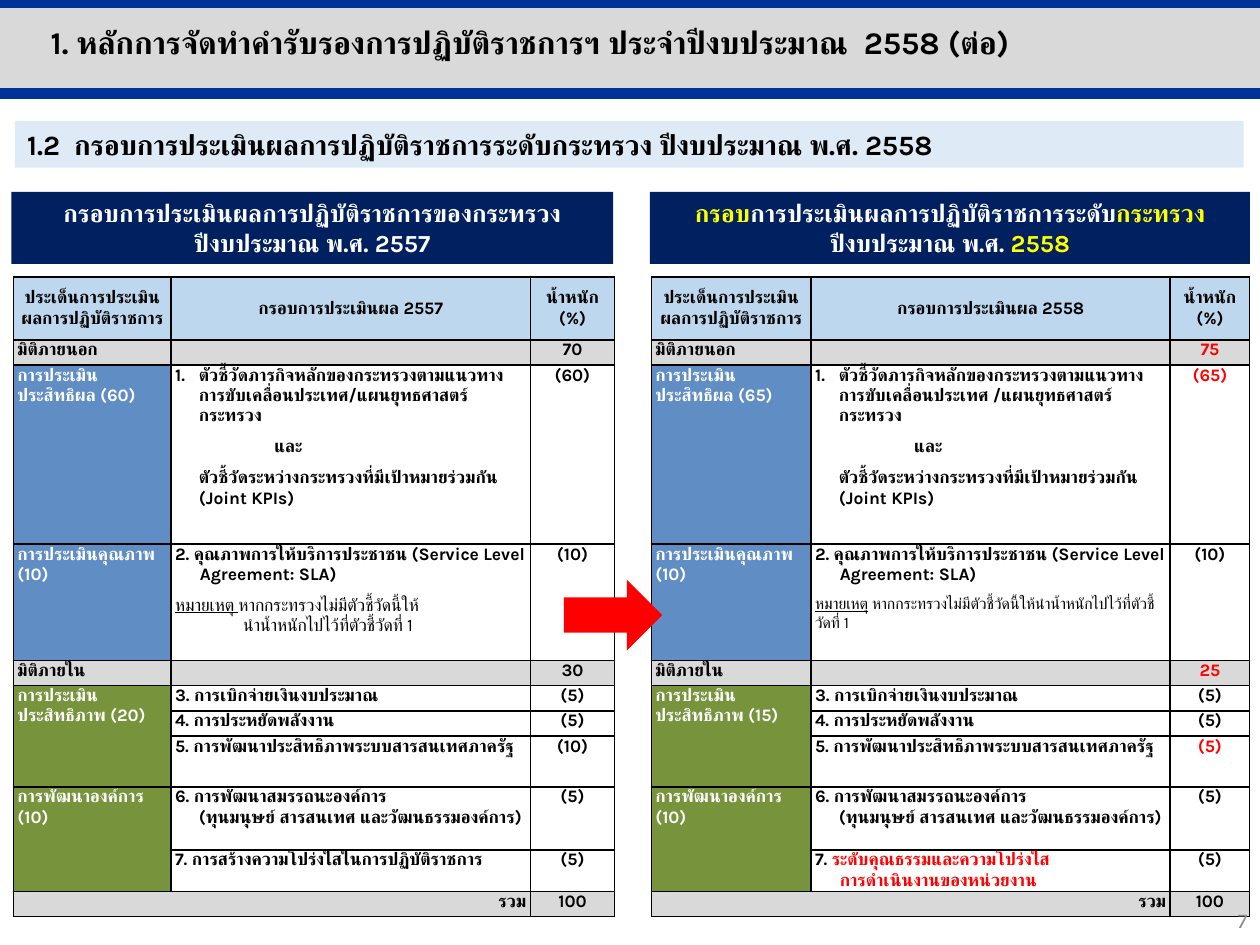
from dataclasses import dataclass

from lxml.etree import SubElement
from pptx import Presentation
from pptx.dml.color import RGBColor
from pptx.enum.shapes import MSO_CONNECTOR as Connector, MSO_SHAPE as Shape
from pptx.enum.text import MSO_ANCHOR as Anchor, PP_ALIGN as Align
from pptx.oxml.ns import qn
from pptx.util import Cm, Pt

FONT = "Karla"
BLACK, WHITE, RED, YELLOW = "000000", "FFFFFF", "FF0000", "FFFF00"
GREY, NAVY, BLUE, GREEN = "D9D9D9", "002060", "608DC4", "77933C"
HEADER_BLUE, PALE_BLUE, RULE_BLUE = "BDD7EE", "DEEBF7", "003399"

ROW_HEIGHTS = [1.27, 0.51, 3.61, 2.34, 0.51, 0.51, 0.51, 1.02, 1.27, 0.84, 0.51]
TOTAL_ROWS = (1, 4, 10)
WEIGHTS_2557 = [70, 60, 10, 30, 5, 5, 10, 5, 5, 100]
WEIGHTS_2558 = [75, 65, 10, 25, 5, 5, 5, 5, 5, 100]


@dataclass
class Run:
    text: str
    color: str = BLACK
    size: float = 10
    bold: bool = True
    underline: bool = False


@dataclass
class Paragraph:
    runs: list
    margin: float = 0
    hanging: float = 0
    before: float = 0
    align: Align = Align.LEFT
    numbered: bool = False


def line(text, color=BLACK, **layout):
    return Paragraph([Run(text, color)], **layout)


def rgb(color):
    return RGBColor.from_string(color)


def add_run(paragraph, content):
    """Add one styled run for each line of the content."""
    for index, text in enumerate(content.text.split("\n")):
        if index:
            paragraph.add_line_break()
        run = paragraph.add_run()
        run.text = text
        font = run.font
        font.name, font.size = FONT, Pt(content.size)
        font.bold, font.underline = content.bold, content.underline
        font.color.rgb = rgb(content.color)
        SubElement(font._element, qn("a:cs"), typeface=FONT)


def write_text(frame, paragraphs):
    frame.word_wrap = True
    for index, content in enumerate(paragraphs):
        paragraph = frame.add_paragraph() if index else frame.paragraphs[0]
        properties = paragraph._p.get_or_add_pPr()
        properties.set("marL", str(Cm(content.margin)))
        properties.set("indent", str(-Cm(content.hanging)))
        if content.numbered:
            SubElement(properties, qn("a:buAutoNum"), type="arabicPeriod")
        paragraph.alignment = content.align
        paragraph.space_before = Pt(content.before)
        for run in content.runs:
            add_run(paragraph, run)


def add_block(slide, kind, box, color, paragraphs=()):
    shape = slide.shapes.add_shape(kind, *map(Cm, box))
    shape.shadow.inherit = False
    shape.fill.solid()
    shape.fill.fore_color.rgb = rgb(color)
    shape.line.fill.background()
    write_text(shape.text_frame, paragraphs)


def add_text(slide, box, paragraph):
    frame = slide.shapes.add_textbox(*map(Cm, box)).text_frame
    frame.vertical_anchor = Anchor.MIDDLE
    write_text(frame, [paragraph])


def add_rule(slide, y):
    connector = slide.shapes.add_connector(
        Connector.STRAIGHT, 0, Cm(y), Cm(25.4), Cm(y))
    connector.line.color.rgb = rgb(RULE_BLUE)
    connector.line.width = Pt(6)
    SubElement(connector._element.spPr, qn("a:effectLst"))


def add_borders(cell):
    properties = cell._tc.get_or_add_tcPr()
    for side in ("lnL", "lnR", "lnT", "lnB"):
        border = SubElement(properties, qn(f"a:{side}"), w=str(Pt(1)))
        SubElement(SubElement(border, qn("a:solidFill")), qn("a:srgbClr"), val=BLACK)


def fill_cell(cell, color, paragraphs):
    add_borders(cell)
    cell.fill.solid()
    cell.fill.fore_color.rgb = rgb(color)
    cell.margin_left = cell.margin_right = Cm(0.08)
    cell.margin_top = cell.margin_bottom = 0
    if paragraphs:
        write_text(cell.text_frame, paragraphs)
    else:
        SubElement(cell.text_frame.paragraphs[0]._p, qn("a:endParaRPr"), sz="1000")


def dimension_labels(weights):
    """Give the text and fill of the first column below the header."""
    efficiency, development = sum(weights[4:7]), sum(weights[7:9])
    return {
        1: ("มิติภายนอก", GREY),
        2: (f"การประเมินประสิทธิผล ({weights[1]})", BLUE),
        3: (f"การประเมินคุณภาพ ({weights[2]})", BLUE),
        4: ("มิติภายใน", GREY),
        5: (f"การประเมินประสิทธิภาพ ({efficiency})", GREEN),
        8: (f"การพัฒนาองค์การ ({development})", GREEN),
    }


def indicators(slash, note, transparency):
    """Give the paragraphs of the middle column by row."""
    return {
        2: [line("ตัวชี้วัดภารกิจหลักของกระทรวงตามแนวทางการขับเคลื่อนประเทศ"
                 f"{slash}แผนยุทธศาสตร์กระทรวง", margin=0.48, hanging=0.48, numbered=True),
            line("และ", margin=2, before=6),
            line("ตัวชี้วัดระหว่างกระทรวงที่มีเป้าหมายร่วมกัน (Joint KPIs)",
                 margin=0.48, before=6)],
        3: [line("2. คุณภาพการให้บริการประชาชน (Service Level Agreement: SLA)",
                 margin=0.5, hanging=0.5), *note],
        5: [line("3. การเบิกจ่ายเงินงบประมาณ")],
        6: [line("4. การประหยัดพลังงาน")],
        7: [line("5. การพัฒนาประสิทธิภาพระบบสารสนเทศภาครัฐ", margin=0.5, hanging=0.5)],
        8: [line("6. การพัฒนาสมรรถนะองค์การ \n(ทุนมนุษย์ สารสนเทศ และวัฒนธรรมองค์การ)",
                 margin=0.48, hanging=0.48)],
        9: [Paragraph([Run("7. "), transparency], margin=0.5, hanging=0.5)],
    }


def add_framework_table(slide, left, widths, year, weights, middle):
    frame = slide.shapes.add_table(len(ROW_HEIGHTS), 3, Cm(left), Cm(5.58),
                                   Cm(sum(widths)), Cm(sum(ROW_HEIGHTS)))
    table = frame.table
    for column, width in zip(table.columns, widths):
        column.width = Cm(width)
    for row, height in zip(table.rows, ROW_HEIGHTS):
        row.height = Cm(height)

    headers = [["ประเด็นการประเมินผลการปฏิบัติราชการ"],
               [f"กรอบการประเมินผล {year}"], ["น้ำหนัก", "(%)"]]
    for column, texts in enumerate(headers):
        cell = table.cell(0, column)
        fill_cell(cell, HEADER_BLUE, [line(text, align=Align.CENTER) for text in texts])
        cell.vertical_anchor = Anchor.MIDDLE

    labels = dimension_labels(weights)
    for row, (weight, previous) in enumerate(zip(weights, WEIGHTS_2557), start=1):
        is_total = row in TOTAL_ROWS
        label, color = labels.get(row, ("", GREY if is_total else GREEN))
        label_color = BLACK if is_total else WHITE
        paragraphs = [line(label, label_color)] if label else []
        if row == 10:
            paragraphs = [line("รวม", align=Align.RIGHT)]
        fill_cell(table.cell(row, 0), color, paragraphs)
        row_color = GREY if is_total else WHITE
        fill_cell(table.cell(row, 1), row_color, middle.get(row))
        weight_text = str(weight) if is_total else f"({weight})"
        weight_color = BLACK if weight == previous else RED
        fill_cell(table.cell(row, 2), row_color,
                  [line(weight_text, weight_color, align=Align.CENTER)])
    table.cell(2, 1).margin_right = Cm(0.2)

    for first, last in (((5, 0), (7, 0)), ((8, 0), (9, 0)), ((10, 0), (10, 1))):
        table.cell(*first).merge(table.cell(*last))


def main():
    presentation = Presentation()
    presentation.slide_width, presentation.slide_height = Cm(25.4), Cm(19.05)
    slide = presentation.slides.add_slide(presentation.slide_layouts[6])

    add_block(slide, Shape.RECTANGLE, (0, 0.13, 25.4, 1.73), GREY)
    add_rule(slide, 1.89)
    add_rule(slide, 0.06)

    title_2558 = [("กรอบ", YELLOW), ("การประเมินผลการปฏิบัติราชการระดับ", WHITE),
                  ("กระทรวง ", YELLOW), ("ปีงบประมาณ พ.ศ. ", WHITE), ("2558", YELLOW)]
    add_block(slide, Shape.RECTANGLE, (13.1, 3.87, 12.1, 1.45), NAVY,
              [Paragraph([Run(text, color, 14) for text, color in title_2558],
                         align=Align.CENTER)])
    note_2558 = [Paragraph([
        Run("หมายเหตุ", size=9, bold=False, underline=True),
        Run(" หากกระทรวงไม่มีตัวชี้วัดนี้ให้นำน้ำหนักไปไว้ที่ตัวชี้วัดที่ 1", size=9, bold=False),
    ], before=6)]
    add_framework_table(slide, 13.13, [3.22, 7.24, 1.6], 2558, WEIGHTS_2558, indicators(
        " /", note_2558, Run("ระดับคุณธรรมและความโปร่งใส\nการดำเนินงานของหน่วยงาน", RED)))
    add_text(slide, (19.69, 18.03, 5.71, 1.02),
             Paragraph([Run("7", "8C8C8C", 12, bold=False)], align=Align.RIGHT))

    title_2557 = ["กรอบการประเมินผลการปฏิบัติราชการของกระทรวง", "ปีงบประมาณ พ.ศ. 2557"]
    add_block(slide, Shape.RECTANGLE, (0.23, 3.87, 12.13, 1.45), NAVY,
              [Paragraph([Run(text, WHITE, 14)], align=Align.CENTER) for text in title_2557])
    note_2557 = [
        Paragraph([Run("หมายเหตุ ", bold=False, underline=True),
                   Run("หากกระทรวงไม่มีตัวชี้วัดนี้ให้", bold=False)], before=6),
        Paragraph([Run("นำน้ำหนักไปไว้ที่ตัวชี้วัดที่ 1", bold=False)], margin=1.37),
    ]
    add_framework_table(slide, 0.27, [3.18, 7.24, 1.7], 2557, WEIGHTS_2557, indicators(
        "/", note_2557, Run("การสร้างความโปร่งใสในการปฏิบัติราชการ")))

    add_block(slide, Shape.RIGHT_ARROW, (11.37, 11.69, 1.98, 1.42), RED)
    add_block(slide, Shape.RECTANGLE, (0.3, 2.44, 24.77, 0.94), PALE_BLUE, [Paragraph(
        [Run("1.2  กรอบการประเมินผลการปฏิบัติราชการระดับกระทรวง ปีงบประมาณ พ.ศ. 2558", size=16)])])
    add_text(slide, (0.77, 0.33, 24.5, 1.02), Paragraph(
        [Run("1. หลักการจัดทำคำรับรองการปฏิบัติราชการฯ ประจำปีงบประมาณ  2558 (ต่อ)", size=18)]))
    presentation.save("out.pptx")


if __name__ == "__main__":
    main()
